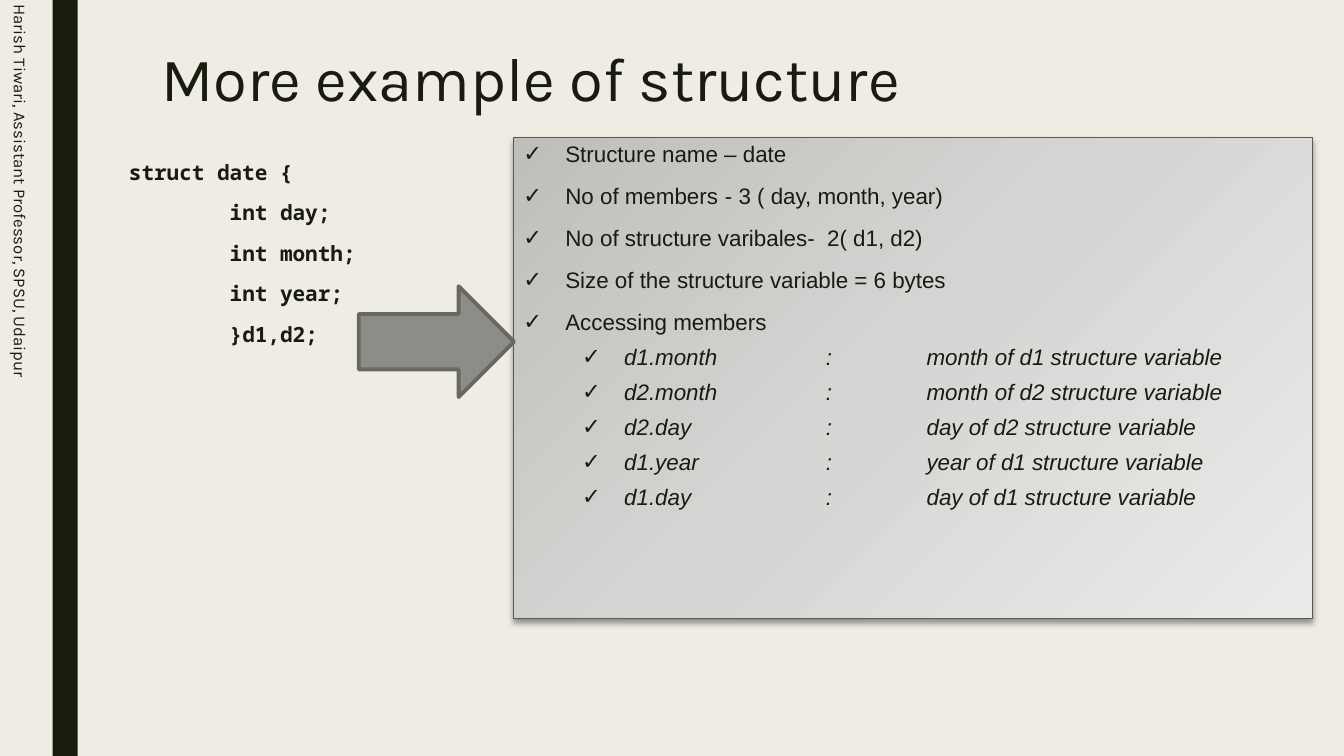
"""Build a slide that explains the members of a C structure."""
from copy import deepcopy
from dataclasses import dataclass
from typing import Any

from lxml import etree
from pptx import Presentation
from pptx.dml.color import RGBColor
from pptx.enum.shapes import MSO_SHAPE
from pptx.enum.text import MSO_ANCHOR, MSO_AUTO_SIZE, PP_ALIGN
from pptx.oxml.ns import qn
from pptx.util import Pt

RECTANGLE = MSO_SHAPE.RECTANGLE
RIGHT_ARROW = MSO_SHAPE.RIGHT_ARROW
TOP, MIDDLE = MSO_ANCHOR.TOP, MSO_ANCHOR.MIDDLE
LEFT = PP_ALIGN.LEFT
NO_AUTOFIT = MSO_AUTO_SIZE.NONE
TITLE_ONLY = 5

INK = "191B0E"
PAPER = "EFEDE3"
PANEL_STOPS = ((0, "BEBFBA"), (0.5, "D6D7D4"), (1, "EBEBE9"))
CHECK = "✓"
HANGING = 30
TAB_STEP = 72
AUTHOR_MARGIN = 3

CODE = ("struct date {", "\tint day;", "\tint month;", "\tint year;", "\t}d1,d2;")
FACTS = (
    "Structure name – date",
    "No of members\t- 3 ( day, month, year)",
    "No of structure varibales-  2( d1, d2)",
    "Size of the structure variable = 6 bytes",
    "Accessing members",
)
ACCESSES = (("d1", "month"), ("d2", "month"), ("d2", "day"), ("d1", "year"), ("d1", "day"))


@dataclass(frozen=True)
class Box:
    left: float
    top: float
    width: float
    height: float

    def lengths(self) -> tuple:
        return tuple(Pt(v) for v in (self.left, self.top, self.width, self.height))


@dataclass(frozen=True)
class Style:
    font: str
    size: float
    bold: bool = False
    italic: bool = False
    line_spacing: float = 1.0
    before: float = 0
    after: float = 0
    indent: float = 0
    level: int = 0


@dataclass(frozen=True)
class Block:
    box: Box
    fill: str
    line: str = ""
    line_width: float = 0
    kind: Any = RECTANGLE


TITLE = Style("Karla", 44, line_spacing=0.89)
AUTHOR = Style("Karla", 12)
SOURCE_CODE = Style("Noto Sans Mono", 15, bold=True, line_spacing=0.94, before=10, after=2)
FACT = Style("Arial", 16, line_spacing=0.94, before=10, after=2, indent=30)
ACCESS = Style("Arial", 16, italic=True, line_spacing=0.94, before=5, after=2,
               indent=72, level=1)

SIDE_BAR = Block(Box(37.5, 0, 18, 540), INK)
PANEL = Block(Box(366.8, 97.9, 570.6, 343.8), PAPER, "595959", 0.75)
ARROW = Block(Box(256.3, 204.5, 110.9, 79.2), "8C8D86", "686863", 2.75, RIGHT_ARROW)
TITLE_BOX = Box(108, 31, 756, 55.4)
CODE_BOX = Box(85, 111.6, 234, 343.4)
AUTHOR_BOX = Box(0, 0, 29.5, 540)


def color(value: str) -> RGBColor:
    return RGBColor.from_string(value)


def apply(target: Any, values: dict) -> None:
    for name, value in values.items():
        setattr(target, name, value)


def place(shape: Any, box: Box) -> None:
    apply(shape, dict(zip(("left", "top", "width", "height"), box.lengths())))


def prepare_frame(frame: Any, anchor: Any) -> None:
    apply(frame, {"word_wrap": True, "auto_size": NO_AUTOFIT, "vertical_anchor": anchor})


def add_check(paragraph: Any, indent: float) -> None:
    props = paragraph._p.get_or_add_pPr()
    props.set("marL", str(Pt(indent)))
    props.set("indent", str(-Pt(HANGING)))
    etree.SubElement(props, qn("a:buFont")).set("typeface", "Arial")
    etree.SubElement(props, qn("a:buChar")).set("char", CHECK)


def write(frame: Any, lines: list[tuple[str, Style]]) -> None:
    for index, (text, style) in enumerate(lines):
        paragraph = frame.add_paragraph() if index else frame.paragraphs[0]
        apply(paragraph, {
            "alignment": LEFT, "level": style.level, "line_spacing": style.line_spacing,
            "space_before": Pt(style.before), "space_after": Pt(style.after),
        })
        paragraph._p.get_or_add_pPr().set("defTabSz", str(Pt(TAB_STEP)))
        run = paragraph.add_run()
        run.text = text
        apply(run.font, {"name": style.font, "size": Pt(style.size),
                         "bold": style.bold, "italic": style.italic})
        run.font.color.rgb = color(INK)
        if style.indent:
            add_check(paragraph, style.indent)


def add_block(slide: Any, block: Block) -> Any:
    shape = slide.shapes.add_shape(block.kind, *block.box.lengths())
    shape.shadow.inherit = False
    shape.fill.solid()
    shape.fill.fore_color.rgb = color(block.fill)
    if block.line:
        shape.line.color.rgb = color(block.line)
        shape.line.width = Pt(block.line_width)
    else:
        shape.line.fill.background()
    return shape


def add_text(slide: Any, box: Box, lines: list[tuple[str, Style]], anchor: Any = TOP) -> Any:
    frame = slide.shapes.add_textbox(*box.lengths()).text_frame
    prepare_frame(frame, anchor)
    write(frame, lines)
    return frame


def shade(shape: Any) -> None:
    shape.fill.gradient()
    shape.fill.gradient_angle = 315
    stop_list = shape._element.spPr.find(qn("a:gradFill")).find(qn("a:gsLst"))
    stop_list.append(deepcopy(stop_list[0]))
    for stop, (position, value) in zip(shape.fill.gradient_stops, PANEL_STOPS):
        stop.position = position
        stop.color.rgb = color(value)


def cast_shadow(shape: Any) -> None:
    effects = shape._element.spPr.find(qn("a:effectLst"))
    shadow = etree.SubElement(effects, qn("a:outerShdw"), blurRad=str(Pt(4)),
                              dist=str(Pt(3)), dir="5400000", rotWithShape="0")
    tint = etree.SubElement(shadow, qn("a:srgbClr"), val="000000")
    etree.SubElement(tint, qn("a:alpha"), val="40000")


def main() -> None:
    deck = Presentation()
    apply(deck, {"slide_width": Pt(960), "slide_height": Pt(540)})
    slide = deck.slides.add_slide(deck.slide_layouts[TITLE_ONLY])
    slide.background.fill.solid()
    slide.background.fill.fore_color.rgb = color(PAPER)

    add_block(slide, SIDE_BAR)
    title = slide.shapes.title
    place(title, TITLE_BOX)
    prepare_frame(title.text_frame, MIDDLE)
    write(title.text_frame, [("More example of structure", TITLE)])
    add_text(slide, CODE_BOX, [(line, SOURCE_CODE) for line in CODE])

    panel = add_block(slide, PANEL)
    shade(panel)
    cast_shadow(panel)
    prepare_frame(panel.text_frame, TOP)
    accesses = [(f"{variable}.{member}\t\t:\t{member} of {variable} structure variable", ACCESS)
                for variable, member in ACCESSES]
    write(panel.text_frame, [(fact, FACT) for fact in FACTS] + accesses)

    add_block(slide, ARROW)
    author = add_text(slide, AUTHOR_BOX,
                      [("Harish Tiwari, Assistant Professor, SPSU, Udaipur", AUTHOR)], MIDDLE)
    author._txBody.bodyPr.set("vert", "vert")
    apply(author, {f"margin_{side}": Pt(AUTHOR_MARGIN)
                   for side in ("left", "top", "right", "bottom")})
    deck.save("out.pptx")


if __name__ == "__main__":
    main()
